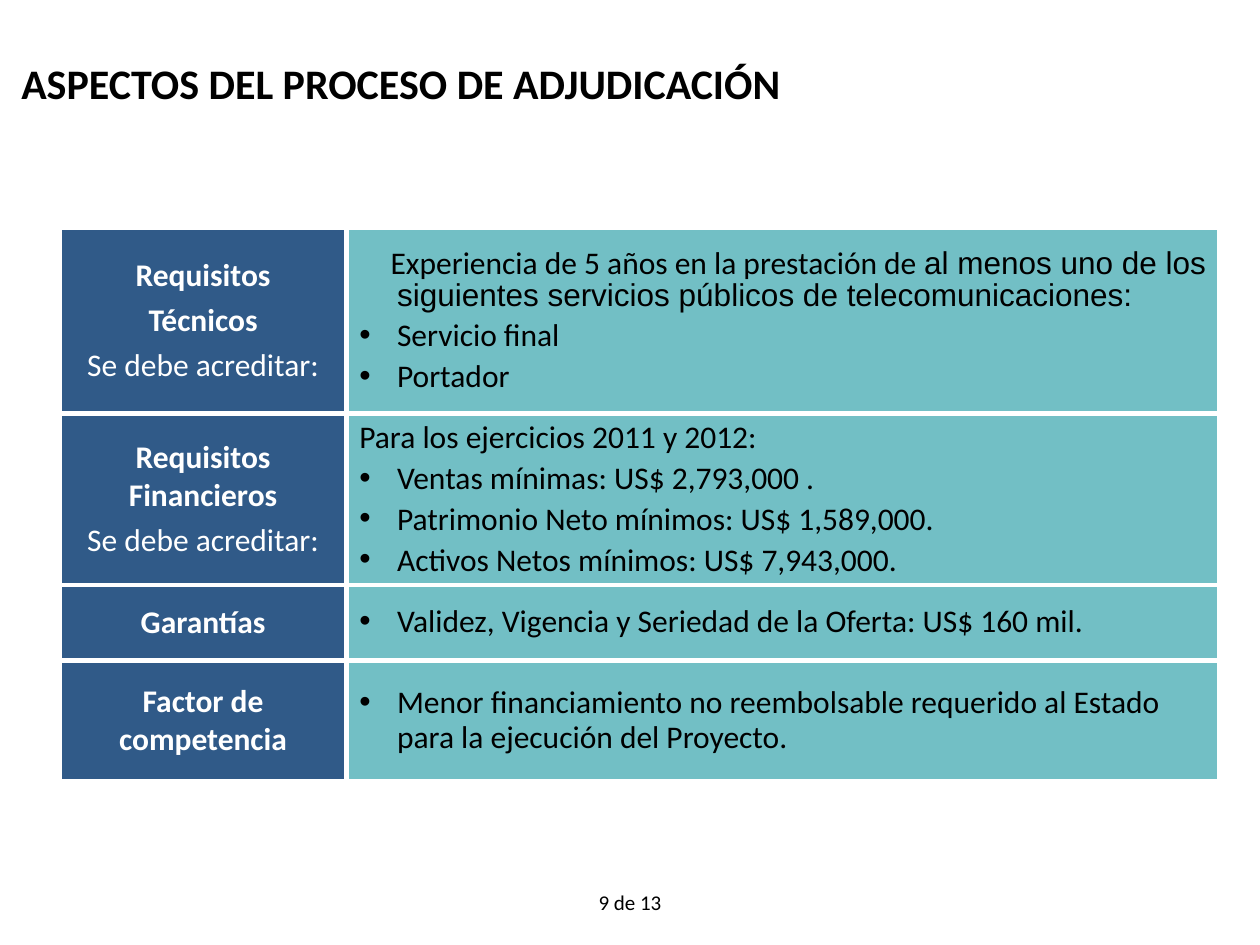
from lxml import etree
from pptx import Presentation, util as u
from pptx.dml.color import RGBColor
from pptx.enum import text as t
from pptx.oxml.ns import qn

HUES = {"head": "305A88", "body": "72BFC5", "ink": "000000", "pale": "FFFFFF"}
TITLE = "ASPECTOS DEL PROCESO DE ADJUDICACIÓN"
PAGE = "9 de 13"
NOTE = "Se debe acreditar:"

# Row: height in cm, bold heads, plain head, intro as (text, font) runs,
# first-line indent of the intro in cm, bullets
ROWS = [
    (3.76, ["Requisitos", "Técnicos"], NOTE,
     [("Experiencia de 5 años en la prestación de ", "Calibri"),
      ("al menos uno de los siguientes servicios públicos de "
       "telecomunicaciones:", "Arial")], -0.13,
     ["Servicio final", "Portador"]),
    (3.45, ["Requisitos Financieros"], NOTE,
     [("Para los ejercicios 2011 y 2012:", "Calibri")], -0.76,
     ["Ventas mínimas: US$ 2,793,000 .",
      "Patrimonio Neto mínimos: US$ 1,589,000.",
      "Activos Netos mínimos: US$ 7,943,000."]),
    (1.52, ["Garantías"], None, [], 0,
     ["Validez, Vigencia y Seriedad de la Oferta: US$ 160 mil."]),
    (2.44, ["Factor de competencia"], None, [], 0,
     ["Menor financiamiento no reembolsable requerido al Estado "
      "para la ejecución del Proyecto."]),
]
COLS = [5.79, 17.6]
HANG = 0.76


def write(para, words, size=18, hue="ink", bold=False, font="Calibri"):
    run = para.add_run()
    run.text = words
    run.font.size = u.Pt(size)
    run.font.name = font
    run.font.bold = bold
    run.font.color.rgb = RGBColor.from_string(HUES[hue])


def next_para(frame):
    """Give the empty first paragraph, or a new one with space before."""
    para = frame.paragraphs[0]
    if para.runs:
        para = frame.add_paragraph()
        para.space_before = u.Pt(3.6)
    return para


def hang(para, first, dot=False):
    props = para._p.get_or_add_pPr()
    props.set("marL", str(u.Cm(HANG)))
    props.set("indent", str(u.Cm(first)))
    if dot:
        etree.SubElement(props, qn("a:buSzPct"), val="103000")
        etree.SubElement(props, qn("a:buFont"), typeface="Arial")
        etree.SubElement(props, qn("a:buChar"), char="•")
    para.line_spacing = 0.9


def style(cell, hue):
    cell.fill.solid()
    cell.fill.fore_color.rgb = RGBColor.from_string(HUES[hue])
    cell.vertical_anchor = t.MSO_ANCHOR.MIDDLE
    props = cell._tc.get_or_add_tcPr()
    for spot, side in enumerate(("lnL", "lnR", "lnT", "lnB")):
        line = etree.Element(qn("a:" + side), w=str(u.Pt(3)))
        fill = etree.SubElement(line, qn("a:solidFill"))
        etree.SubElement(fill, qn("a:srgbClr"), val=HUES["pale"])
        props.insert(spot, line)


def label(slide, area, words, size, bold, align, anchor):
    frame = slide.shapes.add_textbox(*map(u.Cm, area)).text_frame
    frame.word_wrap = True
    frame.vertical_anchor = anchor
    para = frame.paragraphs[0]
    para.alignment = align
    write(para, words, size, bold=bold)


def main():
    deck = Presentation()
    deck.slide_width, deck.slide_height = u.Cm(25.4), u.Cm(19.05)
    slide = deck.slides.add_slide(deck.slide_layouts[6])
    label(slide, (0.18, 0.53, 18.31, 2.26), TITLE, 24, True,
          t.PP_ALIGN.LEFT, t.MSO_ANCHOR.MIDDLE)
    label(slide, (11.61, 17.81, 2.18, 0.99), PAGE, 12, False,
          t.PP_ALIGN.CENTER, t.MSO_ANCHOR.TOP)

    high = sum(row[0] for row in ROWS)
    table = slide.shapes.add_table(
        len(ROWS), len(COLS), u.Cm(1.2), u.Cm(4.58),
        u.Cm(sum(COLS)), u.Cm(high)).table
    table.first_row = table.horz_banding = False
    for col, wide in zip(table.columns, COLS):
        col.width = u.Cm(wide)

    for row, (tall, heads, note, intro, first, dots) in zip(table.rows, ROWS):
        row.height = u.Cm(tall)
        left, right = row.cells
        style(left, "head")
        style(right, "body")
        for words in heads + ([note] if note else []):
            para = next_para(left.text_frame)
            para.alignment = t.PP_ALIGN.CENTER
            write(para, words, hue="pale", bold=words != note)
        if intro:
            para = next_para(right.text_frame)
            hang(para, first)
            for words, font in intro:
                write(para, words, font=font)
        for words in dots:
            para = next_para(right.text_frame)
            hang(para, -HANG, dot=True)
            write(para, words)

    deck.save("out.pptx")


if __name__ == "__main__":
    main()
